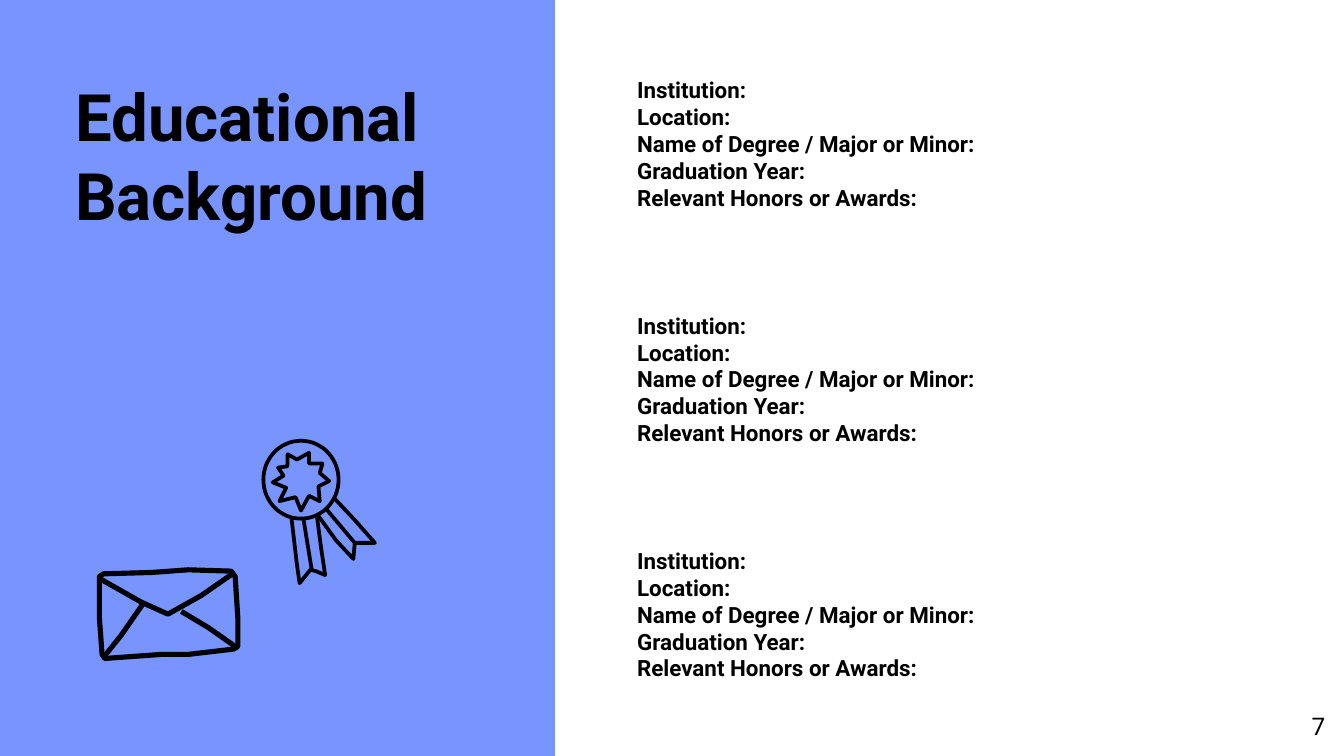
from math import cos, radians, sin

from lxml import etree
from pptx import Presentation
from pptx.dml.color import RGBColor
from pptx.enum.shapes import MSO_SHAPE
from pptx.enum.text import MSO_AUTO_SIZE, PP_ALIGN
from pptx.oxml.ns import qn
from pptx.util import Inches, Pt

RECTANGLE = MSO_SHAPE.RECTANGLE
GROW = MSO_AUTO_SIZE.SHAPE_TO_FIT_TEXT
FIXED = MSO_AUTO_SIZE.NONE
LEFT, RIGHT = PP_ALIGN.LEFT, PP_ALIGN.RIGHT

BLUE = RGBColor(0x78, 0x94, 0xFF)
BLACK = RGBColor(0, 0, 0)

PAGE_WIDTH = 10
PAGE_HEIGHT = PAGE_WIDTH * 9 / 16

FIELDS = [
    "Institution:",
    "Location:",
    "Name of Degree / Major or Minor:",
    "Graduation Year:",
    "Relevant Honors or Awards:",
]
ENTRY_COUNT, ENTRY_TOP, ENTRY_STEP = 3, 0.57, 1.75

# Each stroke is (points in inches, closed).
ENVELOPE = [
    ([(0.74, 4.29), (0.77, 4.27), (1.13, 4.26), (1.4, 4.24), (1.72, 4.25),
      (1.75, 4.29), (1.77, 4.6), (1.77, 4.81), (1.74, 4.83), (1.4, 4.87),
      (1.2, 4.87), (0.78, 4.9), (0.76, 4.87), (0.74, 4.6)], True),
    ([(0.75, 4.31), (1.05, 4.48), (1.25, 4.57), (1.5, 4.43), (1.73, 4.27)], False),
    ([(1.06, 4.5), (0.9, 4.73), (0.78, 4.88)], False),
    ([(1.35, 4.55), (1.55, 4.67), (1.75, 4.81)], False),
]
MEDAL_RIM = [(2.24 + 0.28 * cos(radians(angle)), 3.57 + 0.29 * sin(radians(angle)))
             for angle in range(0, 360, 6)]
AWARD = [
    (MEDAL_RIM, True),
    ([(2.24, 3.8), (2.2, 3.7), (2.08, 3.73), (2.13, 3.63), (2.03, 3.59),
      (2.11, 3.54), (2.07, 3.48), (2.14, 3.47), (2.14, 3.38), (2.21, 3.42),
      (2.3, 3.37), (2.3, 3.45), (2.4, 3.45), (2.38, 3.52), (2.45, 3.58),
      (2.37, 3.62), (2.38, 3.73), (2.3, 3.69)], True),
    ([(2.17, 3.86), (2.21, 4.2), (2.23, 4.34), (2.31, 4.24), (2.35, 4.25),
      (2.42, 4.28), (2.39, 4.08), (2.36, 3.85)], False),
    ([(2.26, 3.87), (2.32, 4.24)], False),
    ([(2.37, 3.84), (2.5, 4.02), (2.63, 4.16), (2.64, 4.04), (2.79, 4.04),
      (2.64, 3.87), (2.49, 3.71)], False),
    ([(2.43, 3.79), (2.64, 4.04)], False),
]


class Page:
    def __init__(self, deck, font_name="Roboto", color=BLACK):
        self.slide = deck.slides.add_slide(deck.slide_layouts[6])
        self.font_name = font_name
        self.color = color

    def panel(self, left, top, width, height, fill):
        shape = self.slide.shapes.add_shape(
            RECTANGLE, Inches(left), Inches(top), Inches(width), Inches(height))
        shape.shadow.inherit = False
        shape.fill.solid()
        shape.fill.fore_color.rgb = fill
        shape.line.fill.background()

    def text(self, left, top, width, height, lines, size,
             bold=True, align=LEFT, inset=0, auto_size=GROW):
        box = self.slide.shapes.add_textbox(
            Inches(left), Inches(top), Inches(width), Inches(height))
        frame = box.text_frame
        frame_format = {"word_wrap": True, "auto_size": auto_size}
        for side in ("left", "top", "right", "bottom"):
            frame_format[f"margin_{side}"] = Inches(inset)
        for name, value in frame_format.items():
            setattr(frame, name, value)
        frame.text = "\n".join(lines)
        font_format = {"name": self.font_name, "size": Pt(size), "bold": bold}
        for para in frame.paragraphs:
            para.alignment = align
            for span in para.runs:
                for name, value in font_format.items():
                    setattr(span.font, name, value)
                span.font.color.rgb = self.color

    def drawing(self, strokes, weight):
        """Join several pen strokes into one unfilled freeform."""
        units = 1000
        builder = None
        for points, closed in strokes:
            scaled = [(x * units, y * units) for x, y in points]
            if builder is None:
                builder = self.slide.shapes.build_freeform(
                    *scaled[0], scale=Inches(1) / units)
            else:
                builder.move_to(*scaled[0])
            builder.add_line_segments(scaled[1:], close=closed)
        shape = builder.convert_to_shape()
        shape.shadow.inherit = False
        shape.fill.background()
        shape.line.color.rgb = self.color
        shape.line.width = Pt(weight)
        outline = shape.element.spPr.find(qn("a:ln"))
        etree.SubElement(outline, qn("a:round"))


def main():
    deck = Presentation()
    deck.slide_width, deck.slide_height = Inches(PAGE_WIDTH), Inches(PAGE_HEIGHT)
    page = Page(deck)
    page.panel(0, 0, 4.13, PAGE_HEIGHT, BLUE)
    page.text(0.56, 0.57, 3.17, 1.18, ["Educational Background"], 35)
    for index in range(ENTRY_COUNT):
        page.text(4.74, ENTRY_TOP + index * ENTRY_STEP, 2.75, 1.01, FIELDS, 12)
    page.drawing(ENVELOPE, 2.75)
    page.drawing(AWARD, 2)
    page.text(9.36, 5.19, 0.6, 0.43, ["7"], 13,
              bold=False, align=RIGHT, inset=0.1, auto_size=FIXED)
    deck.save("out.pptx")


if __name__ == "__main__":
    main()
